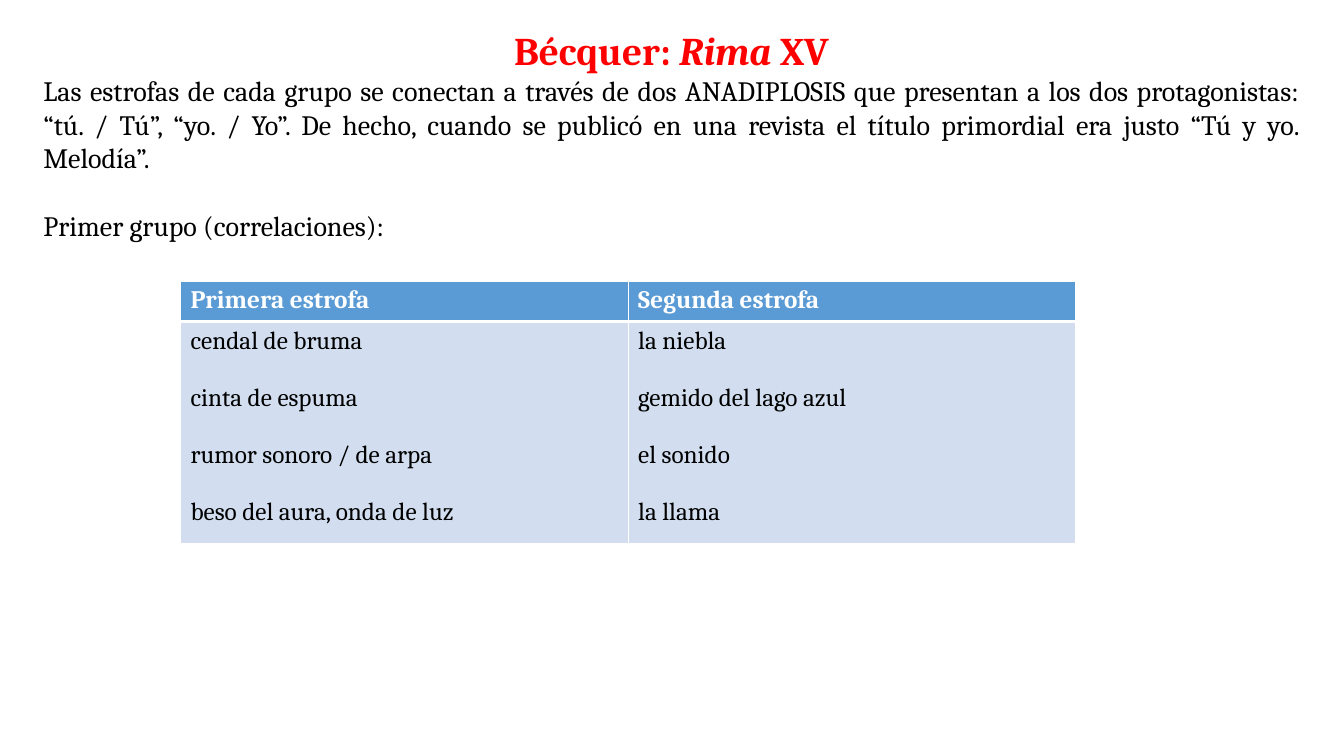
from lxml import etree
from pptx import Presentation
from pptx.dml.color import RGBColor
from pptx.enum.text import MSO_ANCHOR, MSO_AUTO_SIZE, PP_ALIGN
from pptx.oxml.ns import qn
from pptx.util import Inches, Pt

FONT = "Cambria"
RED = RGBColor(0xFF, 0x00, 0x00)
BLACK = RGBColor(0x00, 0x00, 0x00)
WHITE = RGBColor(0xFF, 0xFF, 0xFF)
HEADER_BLUE = RGBColor(0x5B, 0x9B, 0xD5)
PALE_BLUE = RGBColor(0xD2, 0xDE, 0xEF)

TITLE_RUNS = [("Bécquer: ", False), ("Rima", True), (" XV", False)]
BODY_PARAGRAPHS = [
    "Las estrofas de cada grupo se conectan a través de dos ANADIPLOSIS que "
    "presentan a los dos protagonistas: “tú. / Tú”, “yo. / Yo”. De hecho, cuando "
    "se publicó en una revista el título primordial era justo “Tú y yo. Melodía”.",
    "Primer grupo (correlaciones):",
]
STANZAS = {
    "Primera estrofa": ["cendal de bruma", "cinta de espuma",
                        "rumor sonoro / de arpa", "beso del aura, onda de luz"],
    "Segunda estrofa": ["la niebla", "gemido del lago azul", "el sonido", "la llama"],
}


def style_run(run, size, color, bold=False, italic=False):
    font = run.font
    font.name, font.size, font.bold, font.italic = FONT, Pt(size), bold, italic
    font.color.rgb = color


def place(shape, left, top, width, height):
    shape.left, shape.top = Inches(left), Inches(top)
    shape.width, shape.height = Inches(width), Inches(height)
    text_frame = shape.text_frame
    text_frame.word_wrap = True
    text_frame.auto_size = MSO_AUTO_SIZE.NONE
    text_frame.vertical_anchor = MSO_ANCHOR.TOP
    return text_frame


def fill_paragraphs(text_frame, texts, size, color, gap, bold=False):
    text_frame.text = "\n".join(texts)
    for index, paragraph in enumerate(text_frame.paragraphs):
        paragraph.space_before = Pt(gap if index else 0)
        style_run(paragraph.runs[0], size, color, bold)


def add_title(slide, left, top, width, height):
    paragraph = place(slide.shapes.title, left, top, width, height).paragraphs[0]
    paragraph.alignment = PP_ALIGN.CENTER
    for text, italic in TITLE_RUNS:
        run = paragraph.add_run()
        run.text = text
        style_run(run, 28, RED, bold=True, italic=italic)


def add_body(slide, left, top, width, height):
    text_frame = place(slide.placeholders[1], left, top, width, height)
    fill_paragraphs(text_frame, BODY_PARAGRAPHS, 20, BLACK, gap=24)
    for paragraph in text_frame.paragraphs:
        paragraph.alignment = PP_ALIGN.JUSTIFY
        # No bullet and no hanging indent
        properties = paragraph._p.get_or_add_pPr()
        properties.set("marL", "0")
        properties.set("indent", "0")
        etree.SubElement(properties, qn("a:buNone"))


def set_borders(cell, top, bottom):
    properties = cell._tc.get_or_add_tcPr()
    for side, width in (("L", 1), ("R", 1), ("T", top), ("B", bottom)):
        line = etree.SubElement(properties, qn(f"a:ln{side}"), w=str(Pt(width)))
        solid = etree.SubElement(line, qn("a:solidFill"))
        etree.SubElement(solid, qn("a:srgbClr"), val=str(WHITE))


def format_cell(cell, texts, fill, color, bold, top, bottom):
    set_borders(cell, top, bottom)
    cell.fill.solid()
    cell.fill.fore_color.rgb = fill
    fill_paragraphs(cell.text_frame, texts, 18, color, gap=20, bold=bold)


def add_stanza_table(slide, left, top, width, height):
    header_height = 0.4
    table = slide.shapes.add_table(2, len(STANZAS), Inches(left), Inches(top),
                                   Inches(width), Inches(height)).table
    table.horz_banding = False
    table.rows[0].height = Inches(header_height)
    table.rows[1].height = Inches(height - header_height)
    for column, (heading, images) in enumerate(STANZAS.items()):
        table.columns[column].width = Inches(width / len(STANZAS))
        format_cell(table.cell(0, column), [heading], HEADER_BLUE, WHITE, True, 1, 3)
        format_cell(table.cell(1, column), images, PALE_BLUE, BLACK, False, 3, 1)


def main():
    presentation = Presentation()
    presentation.slide_width = Inches(13.33)
    presentation.slide_height = Inches(7.5)
    slide = presentation.slides.add_slide(presentation.slide_layouts[1])
    # Title and explanation share the same margins
    add_title(slide, 0.33, 0.21, 12.66, 0.55)
    add_body(slide, 0.33, 0.68, 12.66, 1.9)
    # Correlations between the two stanzas
    add_stanza_table(slide, 1.79, 2.79, 8.88, 2.6)
    presentation.save("out.pptx")


if __name__ == "__main__":
    main()
